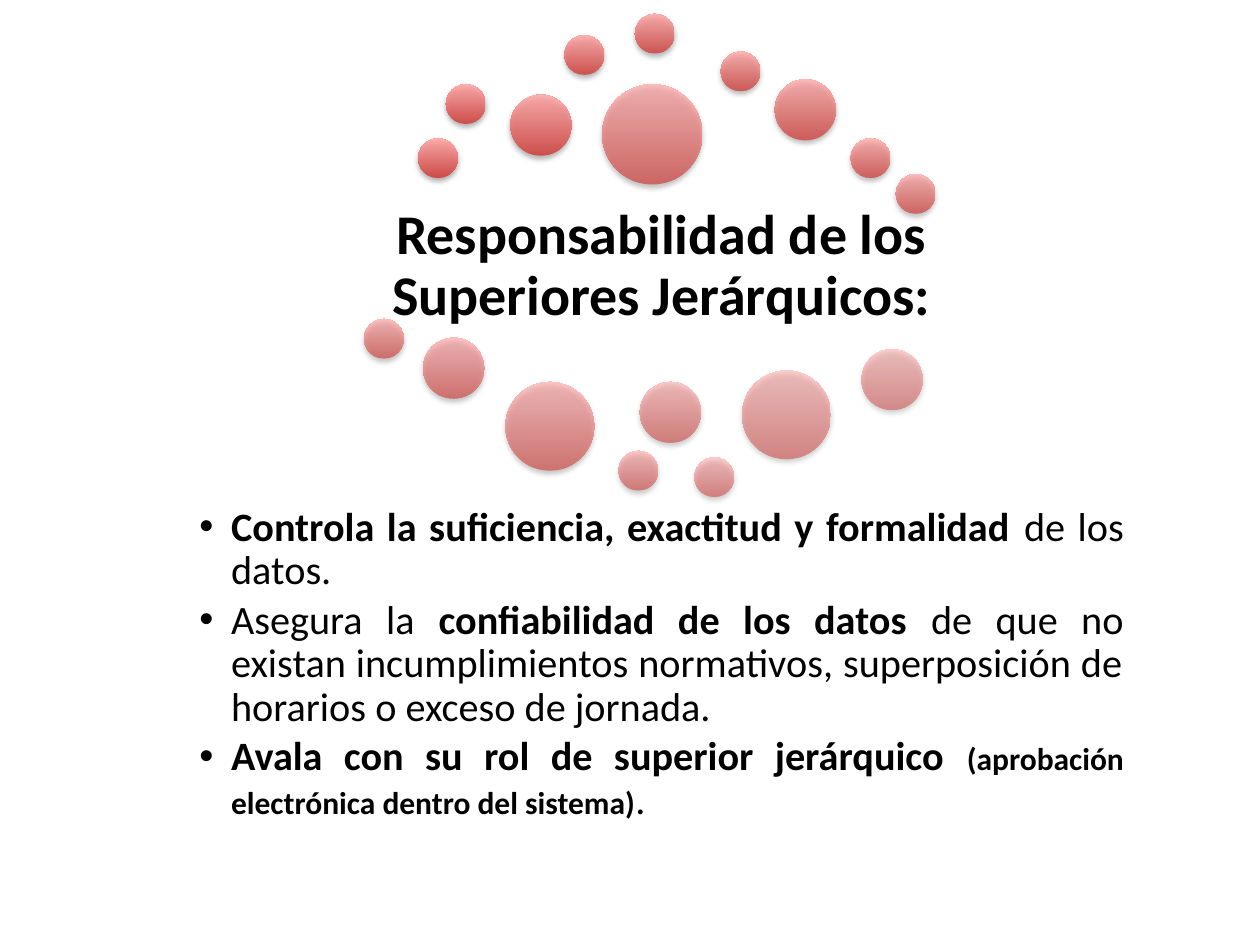
from dataclasses import dataclass

from lxml.etree import SubElement
from pptx import Presentation
from pptx.dml.color import RGBColor
from pptx.enum.shapes import MSO_SHAPE
from pptx.enum.text import MSO_ANCHOR, MSO_AUTO_SIZE, PP_ALIGN
from pptx.oxml.ns import qn
from pptx.slide import Slide
from pptx.text.text import TextFrame, _Paragraph
from pptx.util import Cm, Pt


@dataclass(frozen=True)
class Theme:
    font: str = "Calibri"
    text: RGBColor = RGBColor(0x00, 0x00, 0x00)
    bubble_dark: RGBColor = RGBColor(0xD1, 0x40, 0x3C)
    bubble_light: RGBColor = RGBColor(0xFF, 0xA6, 0xA5)
    title_size: Pt = Pt(32)
    body_size: Pt = Pt(23)
    note_size: Pt = Pt(18)
    line_spacing: float = 0.9
    first_opacity: float = 90
    last_opacity: float = 50


@dataclass(frozen=True)
class Bubble:
    left: float
    top: float
    diameter: float


@dataclass(frozen=True)
class TextPart:
    text: str
    bold: bool = False
    size: Pt | None = None


THEME = Theme()

# Bubble diameters in centimetres
SMALL, MEDIUM, LARGE, LARGEST = 0.8, 1.23, 1.79, 2.02

# Bubbles fade in this order
BUBBLES = [
    Bubble(8.43, 2.79, SMALL),
    Bubble(8.99, 1.7, SMALL),
    Bubble(10.29, 1.91, MEDIUM),
    Bubble(11.38, 0.71, SMALL),
    Bubble(12.8, 0.28, SMALL),
    Bubble(14.53, 1.04, SMALL),
    Bubble(15.62, 1.6, MEDIUM),
    Bubble(17.15, 2.79, SMALL),
    Bubble(18.06, 3.51, SMALL),
    Bubble(12.14, 1.7, LARGEST),
    Bubble(7.34, 6.43, SMALL),
    Bubble(8.53, 6.81, MEDIUM),
    Bubble(10.19, 7.7, LARGE),
    Bubble(12.47, 9.09, SMALL),
    Bubble(12.9, 7.7, MEDIUM),
    Bubble(14, 9.22, SMALL),
    Bubble(14.96, 7.47, LARGE),
    Bubble(17.37, 7.04, MEDIUM),
]

TITLE = "Responsabilidad de los Superiores Jerárquicos:"
DUTIES = [
    [
        TextPart("Controla la suficiencia, exactitud y formalidad ", bold=True),
        TextPart("de los datos."),
    ],
    [
        TextPart("Asegura la "),
        TextPart("confiabilidad de los datos ", bold=True),
        TextPart("de que no existan incumplimientos normativos, "
                 "superposición de horarios o exceso de jornada."),
    ],
    [
        TextPart("Avala con su rol de superior jerárquico ", bold=True),
        TextPart("(aprobación electrónica dentro del sistema)", bold=True, size=THEME.note_size),
        TextPart("."),
    ],
]


def prepare_frame(frame: TextFrame, inset: float, anchor: MSO_ANCHOR) -> None:
    frame.word_wrap = True
    frame.auto_size = MSO_AUTO_SIZE.NONE
    frame.vertical_anchor = anchor
    frame.margin_left = frame.margin_right = Cm(inset)
    frame.margin_top = frame.margin_bottom = Cm(inset)


def format_paragraph(paragraph: _Paragraph, size: Pt, alignment: PP_ALIGN) -> None:
    paragraph.alignment = alignment
    paragraph.line_spacing = THEME.line_spacing
    paragraph.font.name = THEME.font
    paragraph.font.size = size
    paragraph.font.color.rgb = THEME.text


def add_bullet(paragraph: _Paragraph, indent: Cm) -> None:
    properties = paragraph._p.get_or_add_pPr()
    properties.set("marL", str(indent))
    properties.set("indent", str(-indent))
    SubElement(properties, qn("a:buFont"), typeface="Arial")
    SubElement(properties, qn("a:buChar"), char="•")


def add_title(slide: Slide) -> None:
    title = slide.shapes.title
    title.left, title.top, title.width, title.height = Cm(7.77), Cm(3.76), Cm(11.13), Cm(3.23)
    prepare_frame(title.text_frame, 0.1, MSO_ANCHOR.MIDDLE)
    title.text_frame.text = TITLE
    paragraph = title.text_frame.paragraphs[0]
    format_paragraph(paragraph, THEME.title_size, PP_ALIGN.CENTER)
    paragraph.font.bold = True


def add_duties(slide: Slide) -> None:
    frame = slide.shapes.add_textbox(Cm(3.94), Cm(10.13), Cm(18.8), Cm(6.88)).text_frame
    prepare_frame(frame, 0.08, MSO_ANCHOR.TOP)
    for index, parts in enumerate(DUTIES):
        paragraph = frame.add_paragraph() if index else frame.paragraphs[0]
        paragraph.level = 1
        add_bullet(paragraph, Cm(0.64))
        format_paragraph(paragraph, THEME.body_size, PP_ALIGN.JUSTIFY)
        paragraph.space_after = Pt(3.45)
        for part in parts:
            run = paragraph.add_run()
            run.text = part.text
            run.font.bold = part.bold
            if part.size:
                run.font.size = part.size


def add_bubble(slide: Slide, bubble: Bubble, opacity: float) -> None:
    shape = slide.shapes.add_shape(
        MSO_SHAPE.OVAL, Cm(bubble.left), Cm(bubble.top), Cm(bubble.diameter), Cm(bubble.diameter)
    )
    shape.line.fill.background()

    # Translucent gradient, dark at the bottom
    shape.fill.gradient()
    shape.fill.gradient_angle = 90
    for stop, color in zip(shape.fill.gradient_stops, (THEME.bubble_dark, THEME.bubble_light)):
        stop.color.rgb = color
    properties = shape._element.spPr
    for color in properties.iter(qn("a:srgbClr")):
        SubElement(color, qn("a:alpha"), val=str(round(opacity) * 1000))

    # Soft shadow straight below
    shape.shadow.inherit = False
    shadow = SubElement(
        properties.find(qn("a:effectLst")), qn("a:outerShdw"),
        blurRad=str(Pt(3.1)), dist=str(Pt(1.8)), dir="5400000", rotWithShape="0",
    )
    shadow_color = SubElement(shadow, qn("a:srgbClr"), val="000000")
    SubElement(shadow_color, qn("a:alpha"), val="35000")


def main() -> None:
    presentation = Presentation()
    presentation.slide_width, presentation.slide_height = Cm(25.4), Cm(19.05)
    slide = presentation.slides.add_slide(presentation.slide_layouts[5])
    add_title(slide)
    add_duties(slide)
    fade = (THEME.first_opacity - THEME.last_opacity) / (len(BUBBLES) - 1)
    for index, bubble in enumerate(BUBBLES):
        add_bubble(slide, bubble, THEME.first_opacity - index * fade)
    presentation.save("out.pptx")


if __name__ == "__main__":
    main()
